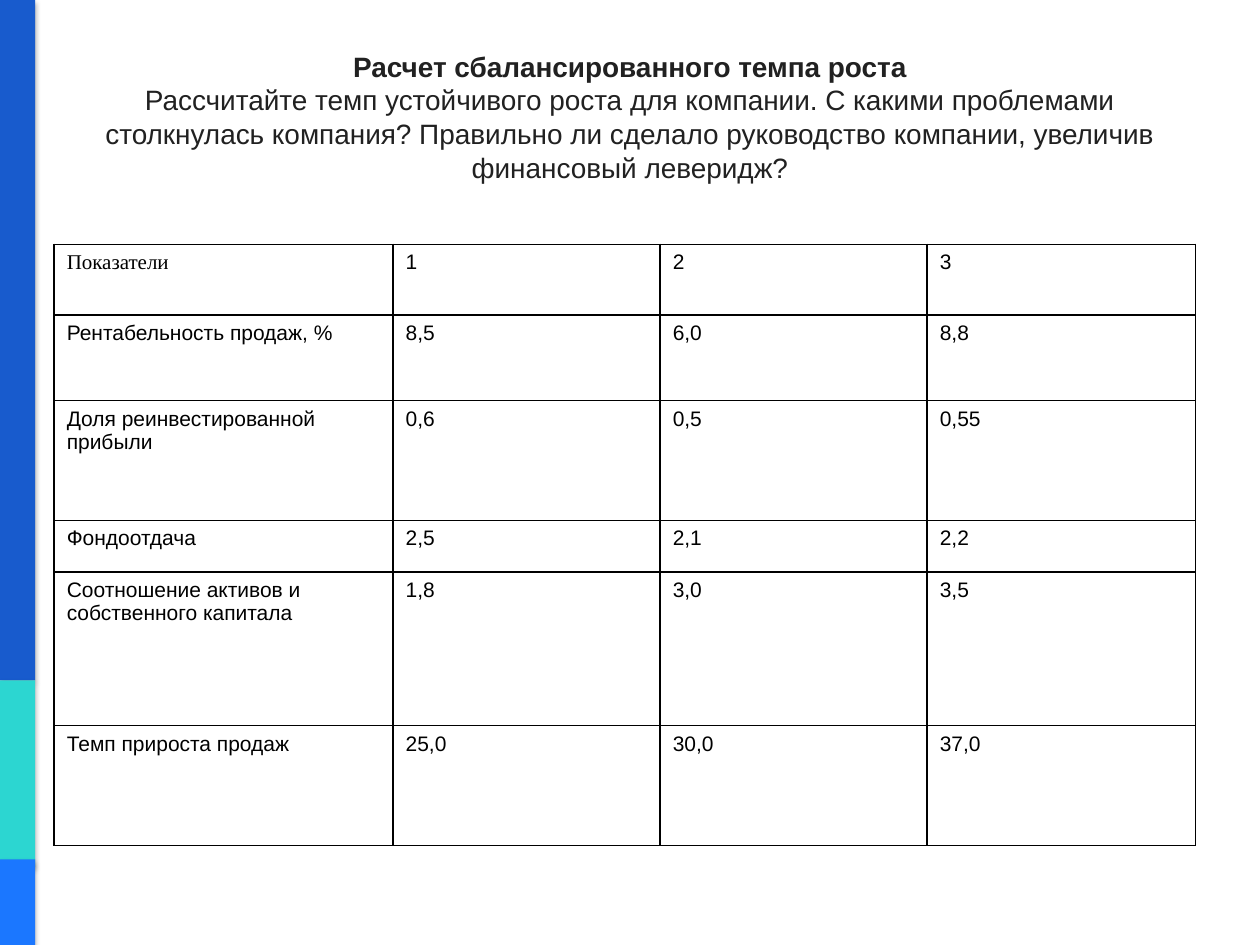
from lxml import etree
from pptx import Presentation
from pptx.dml.color import RGBColor
from pptx.enum.shapes import MSO_SHAPE
from pptx.enum.text import MSO_ANCHOR, PP_ALIGN
from pptx.oxml import parse_xml
from pptx.oxml.ns import nsdecls, qn
from pptx.util import Inches, Pt

RECTANGLE = MSO_SHAPE.RECTANGLE
MIDDLE = MSO_ANCHOR.MIDDLE
CENTER = PP_ALIGN.CENTER

# Content
COLORS = {"blue": "185BCD", "teal": "2CD6D1", "azure": "1B77FF",
          "title": "212121", "text": "000000", "border": "000000"}
HEADING = "Расчет сбалансированного темпа роста"
QUESTION = ("Рассчитайте темп устойчивого роста для компании. С какими проблемами "
            "столкнулась компания? Правильно ли сделало руководство компании, "
            "увеличив финансовый леверидж?")
ROWS = [
    ("Показатели", "1", "2", "3"),
    ("Рентабельность продаж, %", "8,5", "6,0", "8,8"),
    ("Доля реинвестированной прибыли", "0,6", "0,5", "0,55"),
    ("Фондоотдача", "2,5", "2,1", "2,2"),
    ("Cоотношение активов и собственного капитала", "1,8", "3,0", "3,5"),
    ("Темп прироста продаж", "25,0", "30,0", "37,0"),
]

# Layout in inches
WIDTH, HEIGHT = 10, 7.5
BAR_WIDTH = 0.28
BARS = [("blue", 0, 5.4), ("teal", 5.4, 1.48), ("azure", 6.82, HEIGHT - 6.82)]
TABLE_LEFT, TABLE_TOP = 0.43, 1.94
COLUMN_WIDTHS = [2.69, 2.12, 2.12, 2.13]
ROW_HEIGHTS = [0.56, 0.68, 0.95, 0.41, 1.22, 0.95]


def color(name):
    return RGBColor.from_string(COLORS[name])


def add_bar(slide, name, top, height):
    bar = slide.shapes.add_shape(RECTANGLE, 0, Inches(top),
                                 Inches(BAR_WIDTH), Inches(height))
    bar.fill.solid()
    bar.fill.fore_color.rgb = color(name)
    bar.line.fill.background()
    bar.shadow.inherit = False
    effects = bar.element.spPr.find(qn("a:effectLst"))
    effects.append(parse_xml(
        f'<a:outerShdw {nsdecls("a")} blurRad="{Pt(3.1)}" dist="{Pt(1.8)}" '
        'dir="5400000" rotWithShape="0"><a:srgbClr val="000000">'
        '<a:alpha val="35000"/></a:srgbClr></a:outerShdw>'))


def add_borders(cell):
    properties = cell._tc.get_or_add_tcPr()
    for position, side in enumerate(("lnL", "lnR", "lnT", "lnB")):
        line = etree.Element(qn(f"a:{side}"), w=str(Pt(1)))
        fill = etree.SubElement(line, qn("a:solidFill"))
        etree.SubElement(fill, qn("a:srgbClr"), val=COLORS["border"])
        properties.insert(position, line)


def add_title(slide):
    box = slide.shapes.add_textbox(Inches(0.5), Inches(0.3), Inches(9), Inches(1.25))
    frame = box.text_frame
    frame.word_wrap = True
    frame.vertical_anchor = MIDDLE
    paragraph = frame.paragraphs[0]
    paragraph.alignment = CENTER
    paragraph.line_spacing = Pt(19.2)
    paragraph.font.size = Pt(16)
    paragraph.font.name = "Arial"
    paragraph.font.color.rgb = color("title")
    heading = paragraph.add_run()
    heading.text = HEADING
    heading.font.bold = True
    paragraph.add_line_break()
    paragraph.add_run().text = QUESTION


def add_indicator_table(slide):
    table = slide.shapes.add_table(
        len(ROWS), len(COLUMN_WIDTHS), Inches(TABLE_LEFT), Inches(TABLE_TOP),
        Inches(sum(COLUMN_WIDTHS)), Inches(sum(ROW_HEIGHTS))).table
    table.first_row = False
    table.horz_banding = False
    for column, width in zip(table.columns, COLUMN_WIDTHS):
        column.width = Inches(width)
    for row, height, values in zip(table.rows, ROW_HEIGHTS, ROWS):
        row.height = Inches(height)
        for cell, value in zip(row.cells, values):
            cell.text = value
            cell.fill.background()
            add_borders(cell)
            font = cell.text_frame.paragraphs[0].font
            font.size = Pt(12)
            font.name = "Times New Roman" if value == ROWS[0][0] else "Arial"
            font.color.rgb = color("text")


presentation = Presentation()
presentation.slide_width = Inches(WIDTH)
presentation.slide_height = Inches(HEIGHT)
slide = presentation.slides.add_slide(presentation.slide_layouts[6])

# Side stripe, title, table
for bar in BARS:
    add_bar(slide, *bar)
add_title(slide)
add_indicator_table(slide)

presentation.save("out.pptx")
